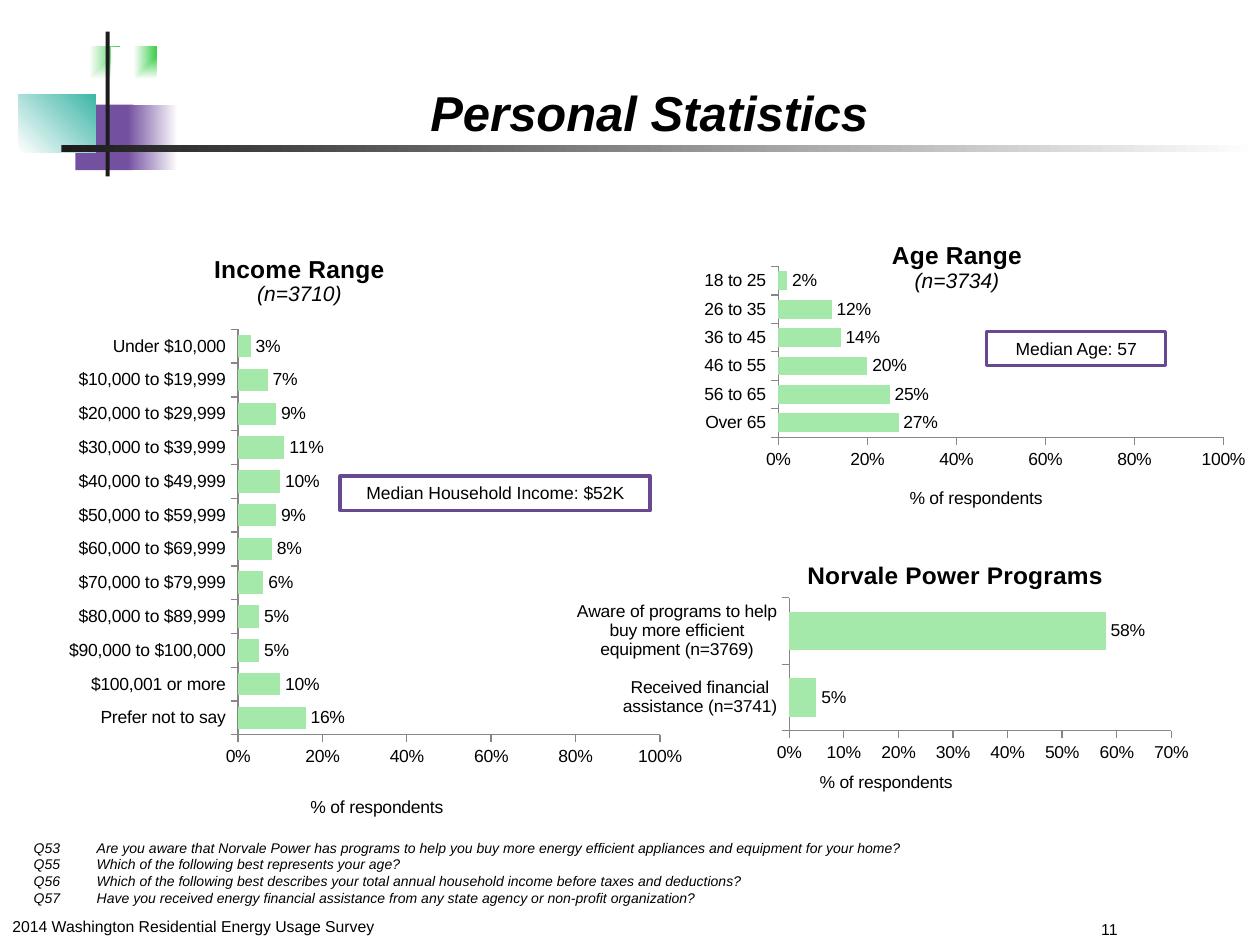
from dataclasses import dataclass
from typing import Any, Optional

from pptx import Presentation
from pptx.chart.data import CategoryChartData
from pptx.dml.color import RGBColor
from pptx.enum.chart import XL_CHART_TYPE, XL_LABEL_POSITION, XL_TICK_MARK
from pptx.enum.shapes import MSO_SHAPE
from pptx.enum.text import MSO_ANCHOR, PP_ALIGN
from pptx.oxml import parse_xml
from pptx.oxml.ns import nsdecls, qn
from pptx.util import Cm, Pt

COLORS = {
    "text": "000000", "paper": "FFFFFF", "green": "3FCF4D", "purple": "7450A0",
    "teal": "3EB6A8", "ink": "1C1C1C", "bar": "A4E8AA", "frame": "684891", "axis": "868686",
}
CORNER_FADE = '<a:path path="rect"><a:fillToRect l="100000" b="100000"/></a:path>'
RIGHT_FADE = '<a:lin ang="0" scaled="1"/>'
DIAGONAL_FADE = '<a:lin ang="18900000" scaled="1"/>'

Box = tuple[float, float, float, float]


@dataclass
class Ornament:
    box: Box
    start: str
    end: str = ""
    fade: str = ""


@dataclass
class Label:
    box: Box
    lines: list[str]
    size: float
    style: dict[str, bool]
    align: PP_ALIGN = PP_ALIGN.LEFT
    anchor: MSO_ANCHOR = MSO_ANCHOR.TOP
    tab: Optional[float] = None


@dataclass
class BarPanel:
    box: Box
    title: str
    sample: str
    shares: dict[str, float]
    title_at: tuple[float, float]
    axis_title_at: tuple[float, float]
    plot: Box
    gap: int = 50
    top_share: float = 1
    step: float = 0.2


ORNAMENTS = [
    Ornament((1.19, 0.94, 1.22, 1.32), "green", "paper", CORNER_FADE),
    Ornament((2.24, 0.94, 0.91, 1.32), "green", "paper", CORNER_FADE),
    Ornament((1.52, 2.11, 1.17, 1.32), "purple"),
    Ornament((2.57, 2.11, 1.02, 1.32), "purple", "paper", RIGHT_FADE),
    Ornament((0.38, 1.9, 1.55, 1.17), "paper", "teal", DIAGONAL_FADE),
    Ornament((2.13, 0.64, 0.08, 2.92), "ink"),
    Ornament((1.24, 2.92, 24.16, 0.15), "ink", "paper", RIGHT_FADE),
]
HEADINGS = [
    Label((0, 18.36, 8.26, 0.64), ["2014 Washington Residential Energy Usage Survey"], 9, {}),
    Label((21.95, 18.42, 3.45, 0.61), ["11"], 9, {}),
    Label((1.42, -0.2, 23.34, 3.18), ["Personal Statistics"], 28,
          {"bold": True, "italic": True}, PP_ALIGN.CENTER, MSO_ANCHOR.BOTTOM),
]
QUESTIONS = Label((0.43, 16.79, 24.13, 1.63), [
    "Q53\tAre you aware that Norvale Power has programs to help you buy more energy efficient appliances and equipment for your home?",
    "Q55\tWhich of the following best represents your age?",
    "Q56\tWhich of the following best describes your total annual household income before taxes and deductions?",
    "Q57\tHave you received energy financial assistance from any state agency or non-profit organization?",
], 8, {"italic": True}, tab=1.27)
MEDIANS = [
    Label((6.86, 9.6, 6.25, 0.69), ["Median Household Income: $52K"], 10, {}, PP_ALIGN.CENTER),
    Label((19.89, 6.68, 3.61, 0.69), ["Median Age: 57"], 10, {}, PP_ALIGN.CENTER),
]
AGE = BarPanel(
    (13.11, 4.45, 12.29, 6.15), "Age Range", "(n=3734)",
    {"Over 65": 0.27, "56 to 65": 0.25, "46 to 55": 0.2,
     "36 to 45": 0.14, "26 to 35": 0.12, "18 to 25": 0.02},
    (0.39, 0.05), (0.42, 0.86), (0.21, 0.15, 0.73, 0.56))
INCOME = BarPanel(
    (0.2, 4.45, 13.94, 14.6), "Income Range", "(n=3710)",
    {"Prefer not to say": 0.16, "$100,001 or more": 0.1, "$90,000 to $100,000": 0.05,
     "$80,000 to $89,999": 0.05, "$70,000 to $79,999": 0.06, "$60,000 to $69,999": 0.08,
     "$50,000 to $59,999": 0.09, "$40,000 to $49,999": 0.1, "$30,000 to $39,999": 0.11,
     "$20,000 to $29,999": 0.09, "$10,000 to $19,999": 0.07, "Under $10,000": 0.03},
    (0.29, 0.04), (0.43, 0.79), (0.33, 0.15, 0.61, 0.56))
PROGRAMS = BarPanel(
    (11.63, 11, 13.77, 5.08), "Norvale Power Programs", "",
    {"Received financial assistance (n=3741)": 0.05,
     "Aware of programs to help buy more efficient equipment (n=3769)": 0.58},
    (0.33, 0.04), (0.35, 0.9), (0.31, 0.21, 0.56, 0.54), 73, 0.7, 0.1)


def assign(target: Any, values: dict[str, Any]) -> None:
    for name, value in values.items():
        setattr(target, name, value)


def rgb(name: str) -> RGBColor:
    return RGBColor.from_string(COLORS[name])


def place(box: Box) -> list[Cm]:
    return [Cm(length) for length in box]


def style_font(font: Any, size: float, **style: bool) -> None:
    assign(font, {"name": "Arial", "size": Pt(size), **style})
    font.color.rgb = rgb("text")


def add_rectangle(slide: Any, box: Box, fill: str) -> Any:
    rectangle = slide.shapes.add_shape(MSO_SHAPE.RECTANGLE, *place(box))
    rectangle.shadow.inherit = False
    rectangle.fill.solid()
    rectangle.fill.fore_color.rgb = rgb(fill)
    rectangle.line.fill.background()
    return rectangle


def add_ornament(slide: Any, ornament: Ornament) -> None:
    rectangle = add_rectangle(slide, ornament.box, ornament.start)
    if ornament.fade:
        solid = rectangle._element.spPr.find(qn("a:solidFill"))
        solid.getparent().replace(solid, parse_xml(
            f'<a:gradFill {nsdecls("a")} rotWithShape="1"><a:gsLst>'
            f'<a:gs pos="0"><a:srgbClr val="{COLORS[ornament.start]}"/></a:gs>'
            f'<a:gs pos="100000"><a:srgbClr val="{COLORS[ornament.end]}"/></a:gs>'
            f'</a:gsLst>{ornament.fade}</a:gradFill>'))


def write_label(shape: Any, label: Label) -> None:
    frame = shape.text_frame
    assign(frame, {"word_wrap": True, "vertical_anchor": label.anchor,
                   "text": "\n".join(label.lines)})
    for paragraph in frame.paragraphs:
        paragraph.alignment = label.align
        if label.tab:
            paragraph._p.get_or_add_pPr().append(parse_xml(
                f'<a:tabLst {nsdecls("a")}><a:tab pos="{Cm(label.tab)}" algn="l"/></a:tabLst>'))
        style_font(paragraph.font, label.size, **label.style)


def add_label(slide: Any, label: Label) -> None:
    write_label(slide.shapes.add_textbox(*place(label.box)), label)


def add_median(slide: Any, label: Label) -> None:
    rectangle = add_rectangle(slide, label.box, "paper")
    rectangle.line.color.rgb = rgb("frame")
    rectangle.line.width = Pt(2)
    write_label(rectangle, label)


def set_layout(element: Any, index: int, target: str, *fractions: float) -> None:
    for previous in element.findall(qn("c:layout")):
        element.remove(previous)
    values = "".join(f'<c:{tag} val="{value}"/>' for tag, value in zip("xywh", fractions))
    element.insert(index, parse_xml(
        f'<c:layout {nsdecls("c")}><c:manualLayout>{target}'
        f'<c:xMode val="edge"/><c:yMode val="edge"/>{values}</c:manualLayout></c:layout>'))


def add_panel(slide: Any, panel: BarPanel) -> None:
    shares = CategoryChartData(number_format="0%")
    shares.categories = list(panel.shares)
    shares.add_series("Series 1", list(panel.shares.values()))
    chart = slide.shapes.add_chart(XL_CHART_TYPE.BAR_CLUSTERED, *place(panel.box), shares).chart
    assign(chart, {"has_legend": False, "has_title": True})
    style_font(chart.font, 10)
    chart._chartSpace.find(qn("c:txPr")).addprevious(parse_xml(
        f'<c:spPr {nsdecls("c", "a")}><a:noFill/><a:ln><a:noFill/></a:ln></c:spPr>'))

    heading = chart.chart_title.text_frame
    heading.text = panel.title
    style_font(heading.paragraphs[0].runs[0].font, 14, bold=True)
    if panel.sample:
        sample = heading.add_paragraph().add_run()
        sample.text = panel.sample
        style_font(sample.font, 12, bold=False, italic=True)
    set_layout(chart.chart_title._element, 1, "", *panel.title_at)
    set_layout(chart._chartSpace.chart.plotArea, 0,
               '<c:layoutTarget val="inner"/>', *panel.plot)

    for axis in (chart.category_axis, chart.value_axis):
        assign(axis, {"has_major_gridlines": False, "major_tick_mark": XL_TICK_MARK.OUTSIDE,
                      "minor_tick_mark": XL_TICK_MARK.NONE})
        axis.format.line.color.rgb = rgb("axis")
        style_font(axis.tick_labels.font, 10, bold=False)
    scale = chart.value_axis
    assign(scale, {"minimum_scale": 0, "maximum_scale": panel.top_share,
                   "major_unit": panel.step, "has_title": True})
    assign(scale.tick_labels, {"number_format": "0%", "number_format_is_linked": False})
    caption = scale.axis_title.text_frame
    caption.text = "% of respondents"
    style_font(caption.paragraphs[0].runs[0].font, 10, bold=False)
    set_layout(scale.axis_title._element, 1, "", *panel.axis_title_at)

    plot = chart.plots[0]
    assign(plot, {"gap_width": panel.gap, "vary_by_categories": False, "has_data_labels": True})
    assign(plot.data_labels, {"show_value": True, "number_format": "0%",
                              "number_format_is_linked": False,
                              "position": XL_LABEL_POSITION.OUTSIDE_END})
    style_font(plot.data_labels.font, 10, bold=False)
    bars = plot.series[0].format.fill
    bars.solid()
    bars.fore_color.rgb = rgb("bar")


def main() -> None:
    deck = Presentation()
    assign(deck, {"slide_width": Cm(25.4), "slide_height": Cm(19.05)})
    slide = deck.slides.add_slide(deck.slide_layouts[6])
    for ornament in ORNAMENTS:
        add_ornament(slide, ornament)
    for heading in HEADINGS:
        add_label(slide, heading)
    for panel in (AGE, INCOME):
        add_panel(slide, panel)
    for median in MEDIANS:
        add_median(slide, median)
    add_label(slide, QUESTIONS)
    add_panel(slide, PROGRAMS)
    deck.save("out.pptx")


if __name__ == "__main__":
    main()
